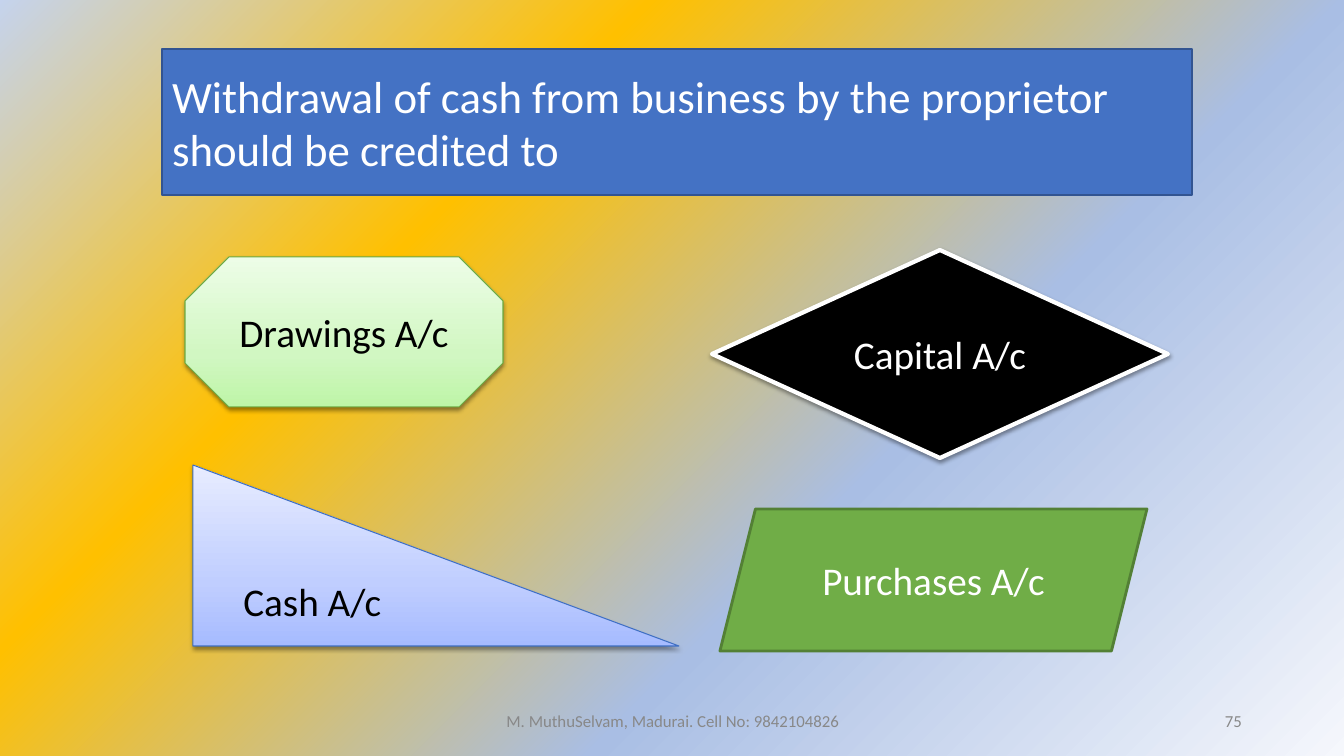
"""Build a quiz slide asking which account a cash withdrawal is credited to."""
from lxml import etree
from pptx import Presentation
from pptx.dml.color import RGBColor
from pptx.enum.shapes import MSO_SHAPE
from pptx.enum.text import MSO_ANCHOR, MSO_AUTO_SIZE, PP_ALIGN
from pptx.oxml.ns import qn
from pptx.util import Emu, Pt

PX = 914400 / 100.8
FONT = "Calibri"
LEFT, CENTER, RIGHT = PP_ALIGN.LEFT, PP_ALIGN.CENTER, PP_ALIGN.RIGHT
MIDDLE = MSO_ANCHOR.MIDDLE
NO_FIT = MSO_AUTO_SIZE.NONE
OCTAGON, DIAMOND = MSO_SHAPE.OCTAGON, MSO_SHAPE.DIAMOND
TRIANGLE, PARALLELOGRAM = MSO_SHAPE.RIGHT_TRIANGLE, MSO_SHAPE.PARALLELOGRAM
COLORS = {
    "blue": "4472C4", "blue_line": "325491", "triangle_line": "3F6FC3",
    "green": "70AD47", "green_line": "538035", "octagon_line": "6DAC43",
    "black": "000000", "white": "FFFFFF", "gray": "888888",
}
GRADIENTS = {
    "background": [(0, "F5F7FC"), (36, "A9BEE4"), (69, "FFC000"), (100, "C5D3ED")],
    "mint": [(0, "BEF5A7"), (35, "D1F7C2"), (100, "EDFDE7")],
    "lavender": [(0, "A6BBFF"), (35, "C0CEFF"), (100, "E7ECFF")],
}


def set_stops(element, name):
    grad = element.find(".//" + qn("a:gradFill"))
    stops = grad.find(qn("a:gsLst"))
    for stop in list(stops):
        stops.remove(stop)
    for position, color in GRADIENTS[name]:
        stop = etree.SubElement(stops, qn("a:gs"), pos=str(position * 1000))
        etree.SubElement(stop, qn("a:srgbClr"), val=color)
    return grad


def set_text(sp, text, size, color, align):
    tf = sp.text_frame
    tf.word_wrap = True
    tf.auto_size = NO_FIT
    tf.vertical_anchor = MIDDLE
    p = tf.paragraphs[0]
    p.text = text
    p.alignment = align
    p.font.name = FONT
    p.font.size = Pt(size)
    p.font.color.rgb = RGBColor.from_string(COLORS[color])


prs = Presentation()
prs.slide_width, prs.slide_height = Emu(round(1344 * PX)), Emu(round(756 * PX))
s = prs.slides.add_slide(prs.slide_layouts[5])

s.background.fill.gradient()
grad = set_stops(s.element, "background")
grad.remove(grad.find(qn("a:lin")))
path = etree.SubElement(grad, qn("a:path"), {"path": "circle"})
etree.SubElement(path, qn("a:fillToRect"), l="100000", t="100000")
etree.SubElement(grad, qn("a:tileRect"), r="-100000", b="-100000")

title = s.shapes.title
title.left, title.top, title.width, title.height = [
    Emu(round(v * PX)) for v in (162, 49, 1030, 146)]
geometry = etree.SubElement(title.element.spPr, qn("a:prstGeom"), prst="horizontalScroll")
etree.SubElement(geometry, qn("a:avLst"))
title.fill.solid()
title.fill.fore_color.rgb = RGBColor.from_string(COLORS["blue"])
title.line.color.rgb = RGBColor.from_string(COLORS["blue_line"])
title.line.width = Pt(2)
set_text(title, "Withdrawal of cash from business by the proprietor should be credited to",
         32, "white", LEFT)

answers = [
    (OCTAGON, (185, 257, 318, 150), "mint", "octagon_line", 0.75, True,
     "Drawings A/c", "black", CENTER),
    (DIAMOND, (712, 250, 456, 208), "black", "white", 3, True,
     "Capital A/c", "white", CENTER),
    (TRIANGLE, (193, 465, 486, 181), "lavender", "triangle_line", 0.75, True,
     "Cash A/c", "black", LEFT),
    (PARALLELOGRAM, (720, 509, 427, 142), "green", "green_line", 2, False,
     "Purchases A/c", "white", CENTER),
]
for kind, box, fill, line, width, shadow, text, color, align in answers:
    sp = s.shapes.add_shape(kind, *[Emu(round(v * PX)) for v in box])
    if fill in GRADIENTS:
        sp.fill.gradient()
        sp.fill.gradient_angle = 90
        set_stops(sp.element, fill)
    else:
        sp.fill.solid()
        sp.fill.fore_color.rgb = RGBColor.from_string(COLORS[fill])
    sp.line.color.rgb = RGBColor.from_string(COLORS[line])
    sp.line.width = Pt(width)
    sp.shadow.inherit = False
    if shadow:
        effects = sp.element.spPr.find(qn("a:effectLst"))
        outer = etree.SubElement(effects, qn("a:outerShdw"), blurRad="40000",
                                 dist="20000", dir="5400000", rotWithShape="0")
        tint = etree.SubElement(outer, qn("a:srgbClr"), val=COLORS["black"])
        etree.SubElement(tint, qn("a:alpha"), val="38000")
    set_text(sp, text, 28, color, align)

footers = [
    ((446, 701, 454, 40), "M. MuthuSelvam, Madurai. Cell No: 9842104826", CENTER),
    ((950, 701, 302, 40), "75", RIGHT),
]
for box, text, align in footers:
    sp = s.shapes.add_textbox(*[Emu(round(v * PX)) for v in box])
    set_text(sp, text, 12, "gray", align)

prs.save("out.pptx")
